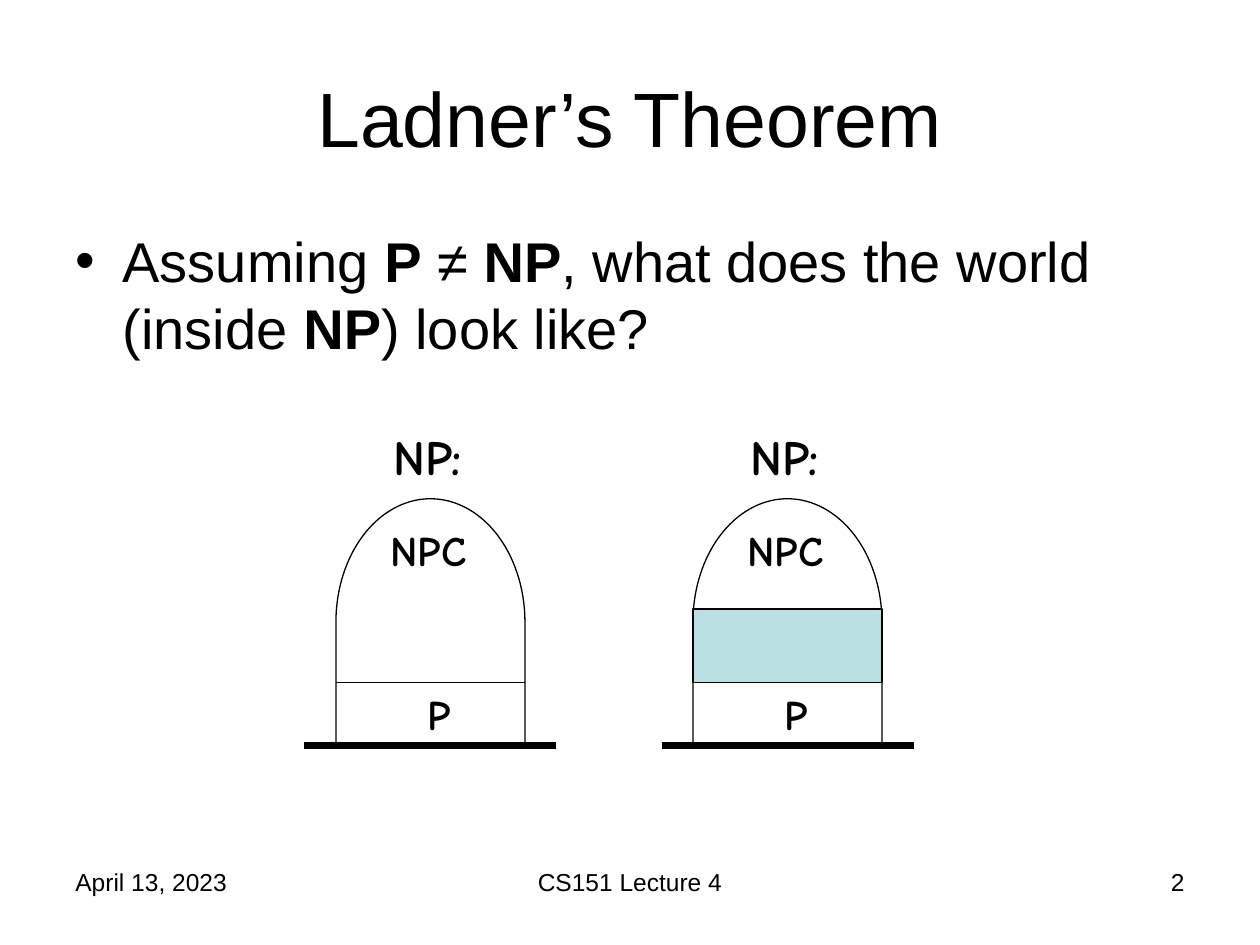
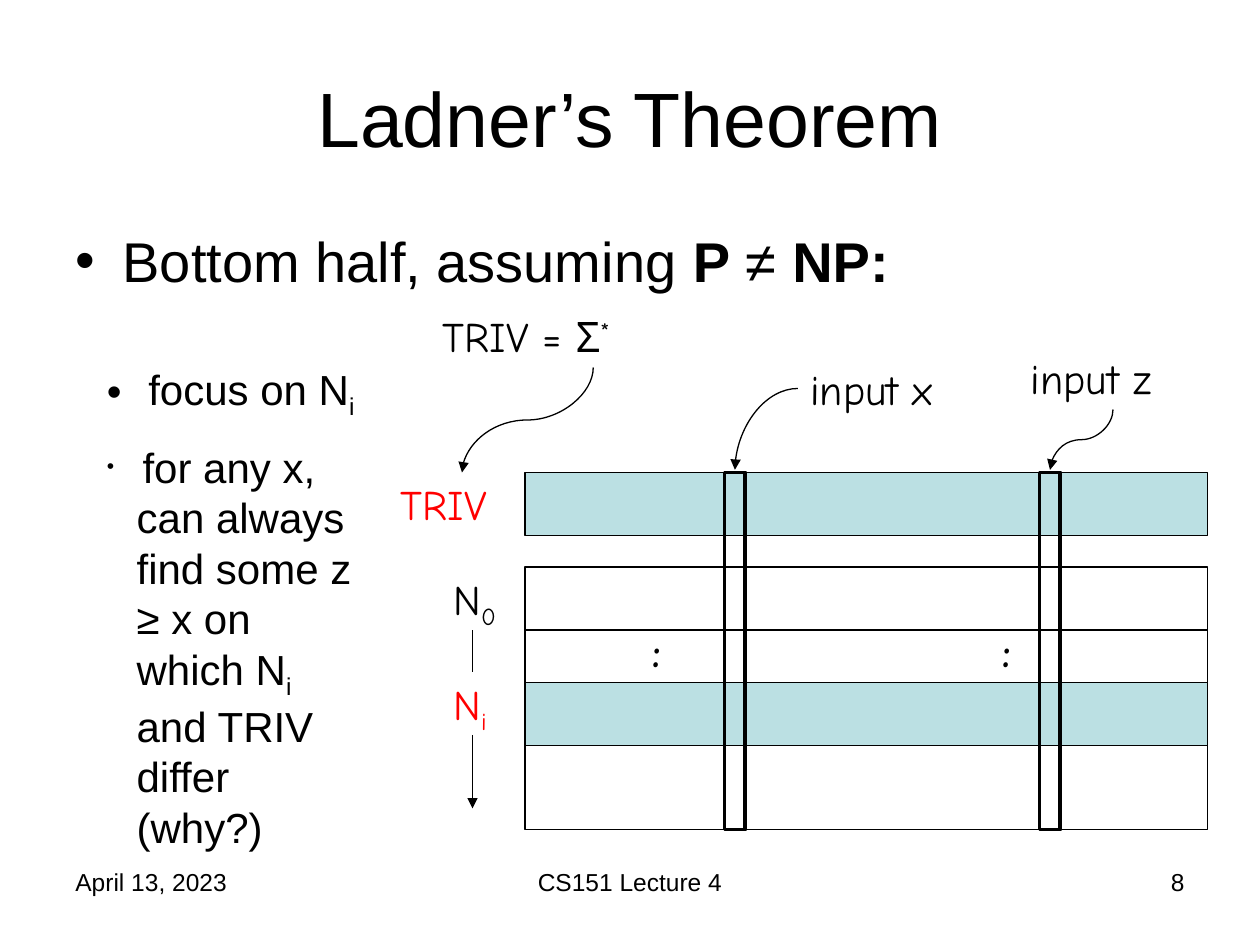
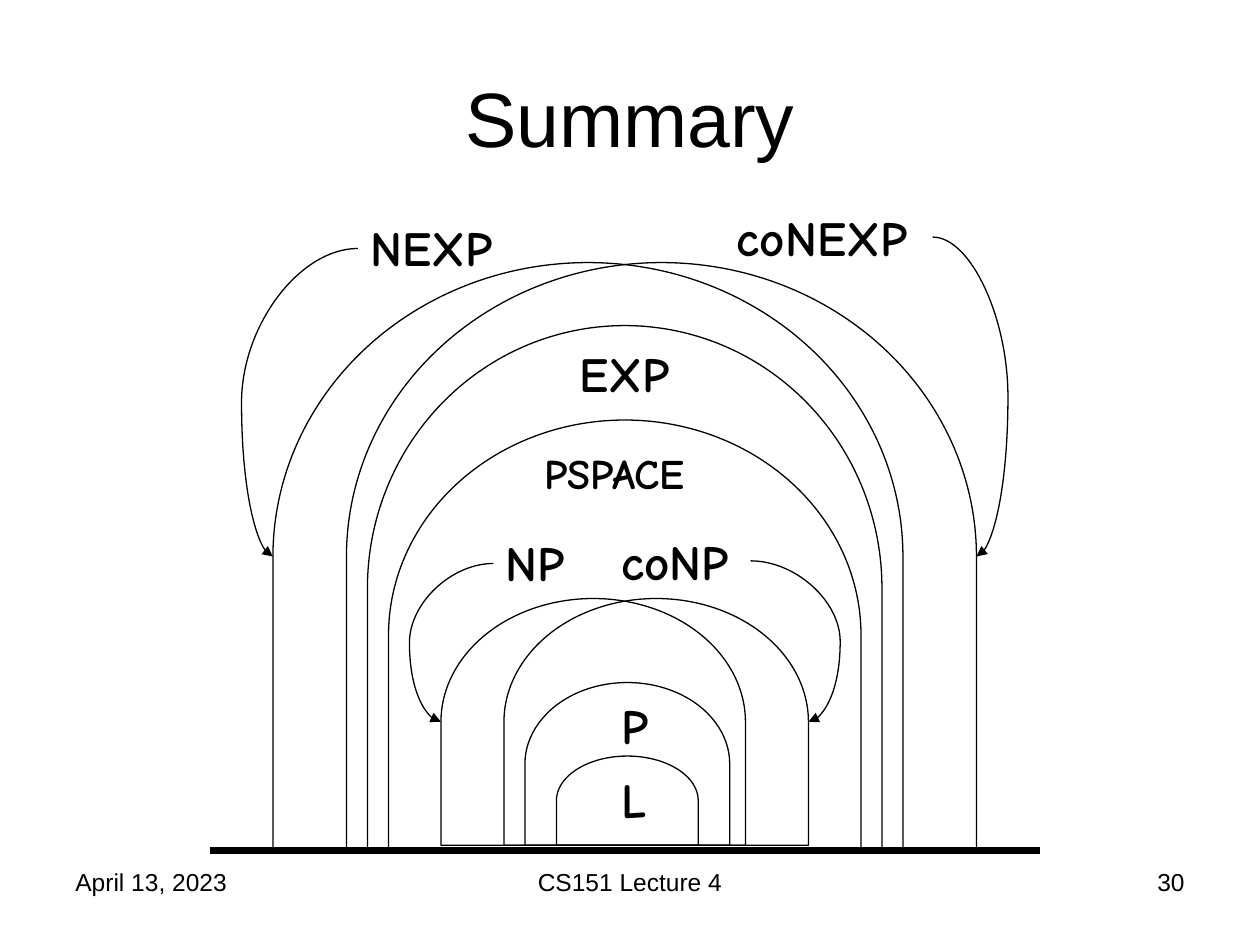
from collections import namedtuple

from lxml import etree
from pptx import Presentation
from pptx.dml.color import RGBColor
from pptx.enum.shapes import MSO_CONNECTOR as LINK, MSO_SHAPE as SHAPE
from pptx.enum.text import MSO_ANCHOR as ANCHOR, MSO_AUTO_SIZE as FIT, PP_ALIGN as ALIGN
from pptx.oxml.ns import qn
from pptx.util import Pt

BLACK = RGBColor(0x00, 0x00, 0x00)
RED = RGBColor(0xFF, 0x00, 0x00)
PALE_BLUE = RGBColor(0xBB, 0xE0, 0xE3)
BODY_FONT = "Arial"
LABEL_FONT = "Comic Neue"
THIN, MEDIUM, THICK = 0.75, 2.25, 4.5
LABEL_HEIGHT = 36
BIG_LABEL_HEIGHT = 41

Box = namedtuple("Box", "left top width height")
TITLE_BOX = Box(36, 21.5, 648, 90)
BODY_BOX = Box(36, 126, 648, 356.5)
FOOTER_TOP, FOOTER_HEIGHT = 492, 37.5

BOLD = {"bold": True}
SUB = {"baseline": -25}
SUPER = {"baseline": 30}


def inside(box, left, top, width, height):
    return Box(box.left + left, box.top + top, width, height)


def points(*values):
    return [Pt(value) for value in values]


def set_bullet(para, indent):
    props = para._p.get_or_add_pPr()
    props.set("marL", str(Pt(indent)))
    props.set("indent", str(-Pt(indent)))
    etree.SubElement(props, qn("a:buFont")).set("typeface", BODY_FONT)
    etree.SubElement(props, qn("a:buChar")).set("char", "•")


def write_text(frame, paragraphs, size=24, font=BODY_FONT, color=BLACK, bold=False,
               align=ALIGN.LEFT, anchor=ANCHOR.TOP, wrap=True, fit=FIT.NONE,
               before=0, indent=None):
    frame.word_wrap = wrap
    frame.auto_size = fit
    frame.vertical_anchor = anchor
    for index, spans in enumerate(paragraphs):
        para = frame.add_paragraph() if index else frame.paragraphs[0]
        para.alignment = align
        para.space_before = Pt(before)
        if indent is not None:
            set_bullet(para, indent)
        for part in spans:
            words, extra = (part, {}) if isinstance(part, str) else part
            span = para.add_run()
            span.text = words
            span.font.name = font
            span.font.size = Pt(extra.get("size", size))
            span.font.bold = extra.get("bold", bold)
            span.font.color.rgb = color
            if "baseline" in extra:
                span._r.get_or_add_rPr().set("baseline", str(extra["baseline"] * 1000))


def add_text(page, box, *paragraphs, **style):
    write_text(page.shapes.add_textbox(*points(*box)).text_frame, paragraphs, **style)


def add_label(page, box, *spans, **style):
    add_text(page, box, spans, font=LABEL_FONT, fit=FIT.SHAPE_TO_FIT_TEXT, **style)


def add_outline(page, kind, box, fill=None, weight=THIN):
    shape = page.shapes.add_shape(kind, *points(*box))
    shape.shadow.inherit = False
    if fill is None:
        shape.fill.background()
    else:
        shape.fill.solid()
        shape.fill.fore_color.rgb = fill
    shape.line.color.rgb = BLACK
    shape.line.width = Pt(weight)
    return shape


def add_dome(page, box):
    left = box.left + (box.width - box.height) / 2
    top = box.top + (box.height - box.width) / 2
    turned = Box(left, top, box.height, box.width)
    add_outline(page, SHAPE.FLOWCHART_DELAY, turned).rotation = 270


def add_line(page, start, end, weight=THIN, arrow=False, kind=LINK.STRAIGHT):
    line = page.shapes.add_connector(kind, *points(*start, *end))
    line.line.color.rgb = BLACK
    line.line.width = Pt(weight)
    if arrow:
        etree.SubElement(line.line._get_or_add_ln(), qn("a:tailEnd")).set("type", "triangle")
    props = line._element.spPr
    etree.SubElement(props, qn("a:effectLst"))
    return props


def add_curve(page, start, end, bend=0.5):
    props = add_line(page, start, end, arrow=True, kind=LINK.CURVE)
    guides = props.find(qn("a:prstGeom")).find(qn("a:avLst"))
    guide = etree.SubElement(guides, qn("a:gd"))
    guide.set("name", "adj1")
    guide.set("fmla", f"val {round(bend * 100000)}")


def add_quarter_curve(page, start, end):
    props = add_line(page, start, end, arrow=True, kind=LINK.CURVE)
    props.find(qn("a:prstGeom")).set("prst", "curvedConnector2")


def add_falling_curve(page, start, end):
    middle_x, middle_y = (start[0] + end[0]) / 2, (start[1] + end[1]) / 2
    half_run, half_fall = abs(end[0] - start[0]) / 2, (end[1] - start[1]) / 2
    props = add_line(page, (middle_x - half_fall, middle_y - half_run),
                     (middle_x + half_fall, middle_y + half_run),
                     arrow=True, kind=LINK.CURVE)
    props.find(qn("a:xfrm")).set("rot", "5400000")


def add_page(deck, title, number):
    page = deck.slides.add_slide(deck.slide_layouts[5])
    holder = page.shapes.title
    holder.left, holder.top, holder.width, holder.height = points(*TITLE_BOX)
    write_text(holder.text_frame, [[title]], size=44, align=ALIGN.CENTER, anchor=ANCHOR.MIDDLE)
    footers = [(36, 168, "April 13, 2023", ALIGN.LEFT),
               (246, 228, "CS151 Lecture 4", ALIGN.CENTER),
               (516, 168, str(number), ALIGN.RIGHT)]
    for left, width, words, align in footers:
        add_text(page, Box(left, FOOTER_TOP, width, FOOTER_HEIGHT), [words], size=14, align=align)
    return page


def add_body(page, *spans):
    add_text(page, BODY_BOX, spans, size=32, before=6.4, indent=27)


def draw_world(page, box, has_middle):
    add_line(page, (box.left, box.top + box.height),
             (box.left + box.width, box.top + box.height), THICK)
    add_dome(page, inside(box, 18, 45, 108, 141))
    labels = [("NPC", 24, 42, 56, 62, LABEL_HEIGHT),
              ("P", 24, 63, 150, 27, LABEL_HEIGHT),
              ("NP:", 28, 44, 0, 64, BIG_LABEL_HEIGHT)]
    for words, size, *place in labels:
        add_label(page, inside(box, *place), words, size=size, bold=True, wrap=False)
    if has_middle:
        add_outline(page, SHAPE.RECTANGLE, inside(box, 18, 108, 108, 42), PALE_BLUE)
    else:
        add_line(page, (box.left + 18, box.top + 150), (box.left + 126, box.top + 150))


def draw_machine_grid(page, box):
    def add_row(top, height, fill=None):
        add_outline(page, SHAPE.RECTANGLE, inside(box, 0, top, box.width, height), fill)

    add_row(0, 36, PALE_BLUE)
    add_row(54, 150)
    add_line(page, (box.left, box.top + 90), (box.left + box.width, box.top + 90))
    for left in (66, 266):
        add_label(page, inside(box, left, 84, 46, LABEL_HEIGHT), ":", bold=True)
    add_row(120, 36, PALE_BLUE)
    for left in (114, 294):
        add_outline(page, SHAPE.RECTANGLE, inside(box, left, 0, 12, box.height), weight=MEDIUM)

    row_names = [(-78, 0, RED, ["TRIV"]),
                 (-48, 54, BLACK, ["N", ("0", SUB)]),
                 (-48, 114, RED, ["N", ("i", SUB)])]
    for left, top, color, spans in row_names:
        add_label(page, inside(box, left, top, 84, LABEL_HEIGHT), *spans, color=color)
    axis = box.left - 30
    add_line(page, (axis, box.top + 114), (axis, box.top + 90))
    add_line(page, (axis, box.top + 150), (axis, box.top + 192), arrow=True)

    callouts = [(156, -66, 108, ["input x"]),
                (282, -72, 108, ["input z"]),
                (-54, -96, 186, ["TRIV = Σ", ("*", SUPER)])]
    for left, top, width, spans in callouts:
        add_label(page, inside(box, left, top, width, LABEL_HEIGHT), *spans)
    add_quarter_curve(page, (box.left + 156, box.top - 48), (box.left + 120, box.top - 1.5))
    add_falling_curve(page, (box.left + 336, box.top - 36), (box.left + 300, box.top - 1.5))
    add_falling_curve(page, (box.left + 39, box.top - 60), (box.left - 36, box.top))


def draw_class_map(page, box):
    domes = [(198, 324, 81, 51), (180, 282, 117, 93), (102, 132, 270, 246),
             (132, 234, 174, 141), (168, 234, 174, 141), (90, 78, 294, 300),
             (78, 42, 360, 336), (36, 42, 360, 336)]
    for place in domes:
        add_dome(page, inside(box, *place))

    labels = [("EXP", 204, 85, 67), ("P", 228, 286, 30), ("L", 228, 328, 30),
              ("NEXP", 84.5, 13, 90), ("NP", 162, 193, 52), ("coNP", 228, 192, 81),
              ("coNEXP", 294, 7, 119)]
    for words, left, top, width in labels:
        add_label(page, inside(box, left, top, width, BIG_LABEL_HEIGHT), words,
                  size=28, bold=True, wrap=False)
    add_label(page, inside(box, 184, 144, 104, LABEL_HEIGHT), "PSPACE", bold=True, wrap=False)

    curves = [(162, 214, 132, 304.5, 1.6), (309, 212.5, 342, 304.5, 1.55),
              (84.5, 34, 36, 210, 1.37), (413, 27.5, 438, 210, 1.72)]
    for from_x, from_y, to_x, to_y, bend in curves:
        add_curve(page, (box.left + from_x, box.top + from_y),
                  (box.left + to_x, box.top + to_y), bend)
    ground = box.top + box.height
    add_line(page, (box.left, ground), (box.left + box.width, ground), THICK)


def build_worlds(deck):
    page = add_page(deck, "Ladner’s Theorem", 2)
    add_body(page, "Assuming ", ("P", BOLD), " ≠ ", ("NP", BOLD),
             ", what does the world (inside ", ("NP", BOLD), ") look like?")
    for index, has_middle in enumerate((False, True)):
        draw_world(page, Box(174 + 204 * index, 240, 144, 186), has_middle)


def build_bottom_half(deck):
    page = add_page(deck, "Ladner’s Theorem", 8)
    add_body(page, "Bottom half, assuming ", ("P", BOLD), " ≠ ", ("NP:", BOLD))
    draw_machine_grid(page, Box(300, 270, 390, 204))
    add_text(page, Box(54, 204, 156, 223),
             [" focus on N", ("i", SUB)],
             [(" ", {"size": 12}), "for any x, can always find some z ≥ x on which N",
              ("i", SUB), " and TRIV differ (why?)"],
             before=12, indent=17, fit=FIT.SHAPE_TO_FIT_TEXT)


def build_summary(deck):
    page = add_page(deck, "Summary", 30)
    draw_class_map(page, Box(120, 108, 474, 378))


def main():
    deck = Presentation()
    deck.slide_width, deck.slide_height = points(720, 540)
    build_worlds(deck)
    build_bottom_half(deck)
    build_summary(deck)
    deck.save("out.pptx")


if __name__ == "__main__":
    main()
